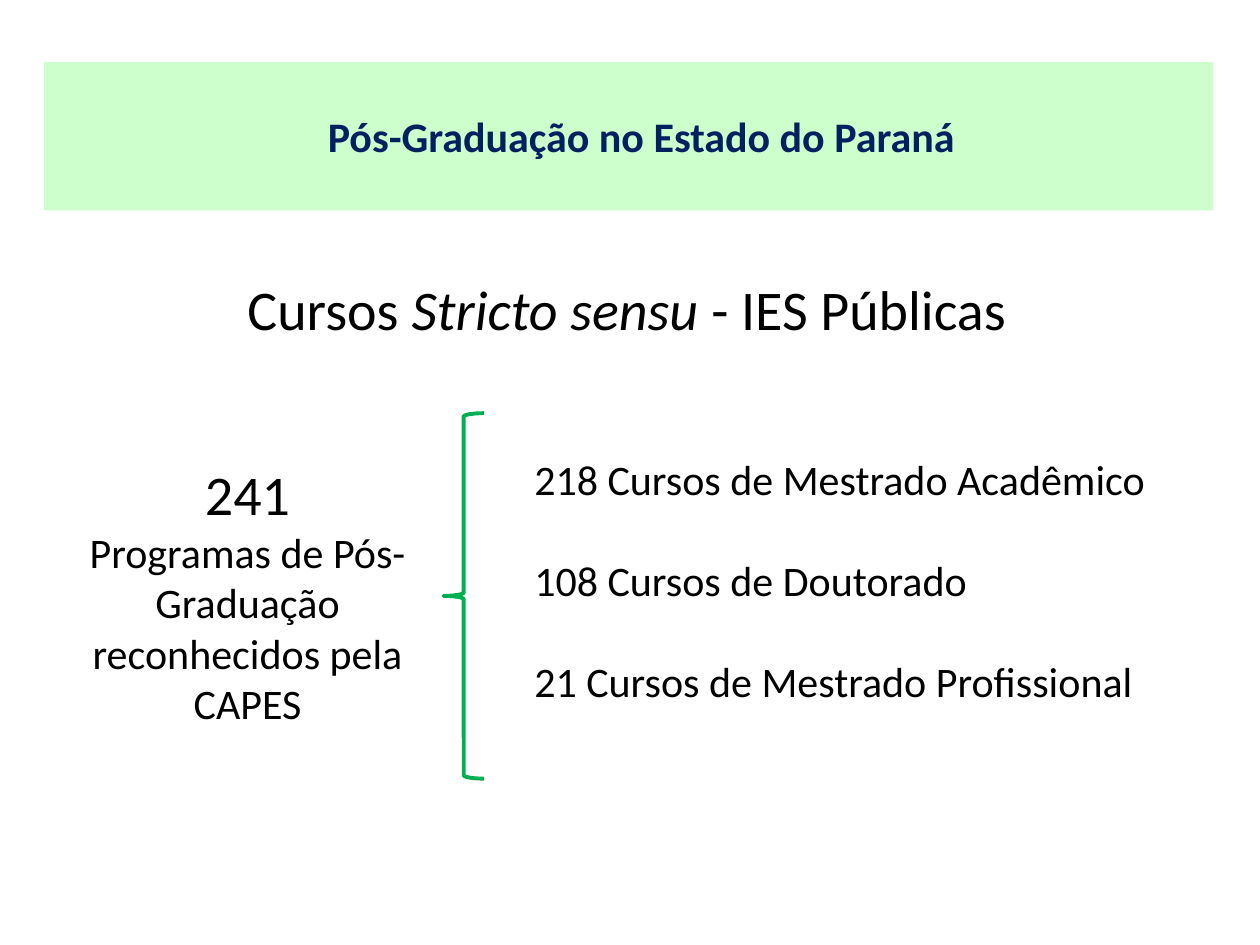
from lxml import etree
from pptx import Presentation
from pptx.dml.color import RGBColor
from pptx.enum.shapes import MSO_SHAPE
from pptx.enum.text import MSO_ANCHOR, MSO_AUTO_SIZE, PP_ALIGN
from pptx.oxml.ns import qn
from pptx.util import Inches, Pt

CENTER, LEFT = PP_ALIGN.CENTER, PP_ALIGN.LEFT
TOP, MIDDLE = MSO_ANCHOR.TOP, MSO_ANCHOR.MIDDLE
TITLE_AND_CONTENT = 1

TITLE = "Pós-Graduação no Estado do Paraná"
SUBTITLE = [("Cursos ", False), ("Stricto sensu ", True), ("- IES Públicas", False)]
PROGRAMS = [("241", 32), ("Programas de Pós-Graduação reconhecidos pela CAPES", 24)]
COURSES = [
    "218 Cursos de Mestrado Acadêmico",
    "108 Cursos de Doutorado",
    "21 Cursos de Mestrado Profissional",
]


def color(hex_code):
    return RGBColor.from_string(hex_code)


def place(shape, left, top, width, height):
    shape.left, shape.top = Inches(left), Inches(top)
    shape.width, shape.height = Inches(width), Inches(height)


def set_frame(shape, anchor, wrap=True):
    frame = shape.text_frame
    frame.auto_size = MSO_AUTO_SIZE.NONE
    frame.word_wrap = wrap
    frame.vertical_anchor = anchor
    return frame


def style(paragraph, size, align=CENTER, hex_code="000000", bold=False):
    paragraph.alignment = align
    font = paragraph.font
    font.name, font.size, font.bold = "Calibri", Pt(size), bold
    font.color.rgb = color(hex_code)


def remove_bullet(paragraph):
    properties = paragraph._p.get_or_add_pPr()
    properties.set("marL", "0")
    properties.set("indent", "0")
    etree.SubElement(properties, qn("a:buNone"))


prs = Presentation()
prs.slide_width, prs.slide_height = Inches(10), Inches(7.5)
slide = prs.slides.add_slide(prs.slide_layouts[TITLE_AND_CONTENT])
shapes = slide.shapes

title = shapes.title
place(title, 0.35, 0.49, 9.28, 1.18)
title.fill.solid()
title.fill.fore_color.rgb = color("CCFFCC")
title_frame = set_frame(title, MIDDLE)
title_frame.margin_left = Inches(0.3)
title_frame.text = TITLE
style(title_frame.paragraphs[0], 24, hex_code="002060", bold=True)

subtitle = shapes.add_textbox(Inches(0.35), Inches(2.13), Inches(9.25), Inches(0.64))
subtitle_line = set_frame(subtitle, TOP).paragraphs[0]
for words, italic in SUBTITLE:
    run = subtitle_line.add_run()
    run.text = words
    run.font.italic = italic
style(subtitle_line, 32)

programs = shapes.add_textbox(Inches(0.43), Inches(3.28), Inches(3.07), Inches(2.86))
programs_frame = set_frame(programs, MIDDLE)
programs_frame.text = "\n".join(words for words, _ in PROGRAMS)
for paragraph, (_, size) in zip(programs_frame.paragraphs, PROGRAMS):
    style(paragraph, size)

courses = slide.placeholders[1]
place(courses, 4.14, 3.55, 5.09, 2.12)
courses_frame = set_frame(courses, TOP, wrap=False)
courses_frame.text = "\n".join(COURSES)
for index, paragraph in enumerate(courses_frame.paragraphs):
    remove_bullet(paragraph)
    paragraph.space_before = Pt(29 if index else 0)
    style(paragraph, 24, LEFT)

brace = shapes.add_shape(
    MSO_SHAPE.LEFT_BRACE, Inches(3.52), Inches(3.28), Inches(0.32), Inches(2.9)
)
brace.shadow.inherit = False
brace.fill.background()
brace.line.color.rgb = color("00B050")
brace.line.width = Pt(2.25)

prs.save("out.pptx")
